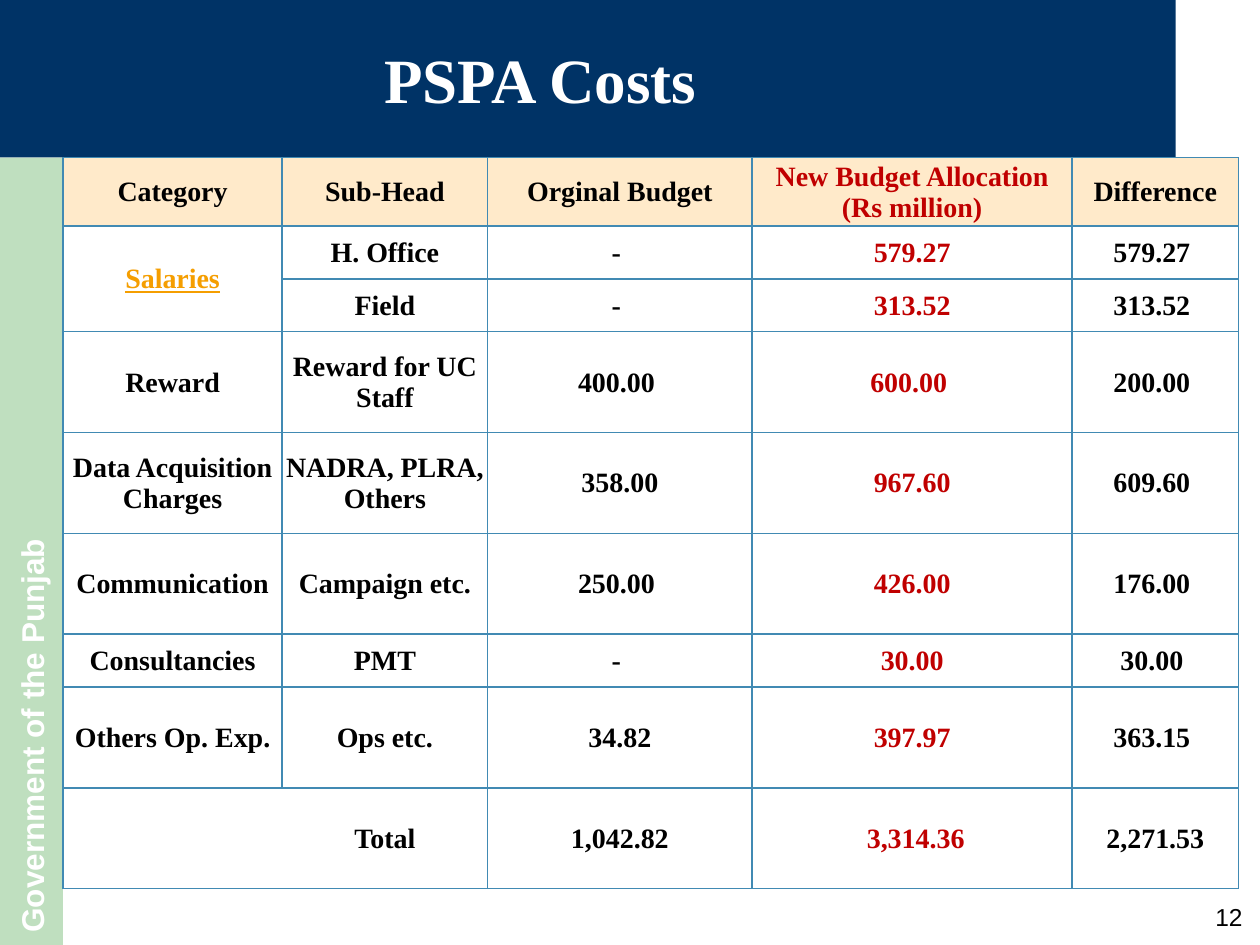
from lxml import etree
from pptx import Presentation
from pptx.dml.color import RGBColor
from pptx.enum.shapes import MSO_SHAPE
from pptx.enum.text import MSO_ANCHOR, PP_ALIGN
from pptx.oxml.ns import qn
from pptx.util import Inches, Pt

COLORS = {
    "navy": "003366", "green": "008000", "white": "FFFFFF", "black": "000000",
    "header": "FFEACA", "border": "418AB3", "red": "C00000", "link": "F59E00",
}
NO_STYLE = "{2D5ABB26-0587-4C30-8999-92F81FD0307C}"
COL_WIDTHS = [1.74, 1.63, 2.1, 2.54, 1.32]
SHORT_ROW, TALL_ROW = 0.42, 0.8
TALL_ROWS = {3, 4, 5, 7, 8}
NEW_BUDGET_COL = 3
ROWS = [
    ["Category", "Sub-Head", "Orginal Budget",
     "New Budget Allocation (Rs million)", "Difference"],
    ["Salaries", "H. Office", "- ", "579.27", "579.27 "],
    ["", "Field", "- ", "313.52", "313.52 "],
    ["Reward", "Reward for UC Staff", "400.00 ", "600.00 ", "200.00 "],
    ["Data Acquisition Charges", "NADRA, PLRA, Others", "358.00", "967.60", "609.60 "],
    ["Communication", "Campaign etc.", "250.00 ", "426.00", "176.00 "],
    ["Consultancies", "PMT", "- ", "30.00", "30.00 "],
    ["Others Op. Exp.", "Ops etc.", "34.82", "397.97", "363.15 "],
    ["", "Total", " 1,042.82 ", " 3,314.36", " 2,271.53 "],
]


def rgb(name):
    return RGBColor.from_string(COLORS[name])


def write(tf, text, color, align=PP_ALIGN.CENTER, **font):
    p = tf.paragraphs[0]
    p.alignment = align
    r = p.add_run()
    r.text = text
    r.font.color.rgb = rgb(color)
    for key, value in font.items():
        setattr(r.font, key, value)


def add_block(s, box, color):
    sp = s.shapes.add_shape(MSO_SHAPE.RECTANGLE, *map(Inches, box))
    sp.shadow.inherit = False
    sp.fill.solid()
    sp.fill.fore_color.rgb = rgb(color)
    sp.line.fill.background()
    sp.text_frame.word_wrap = True
    sp.text_frame.vertical_anchor = MSO_ANCHOR.MIDDLE
    return sp


def add_title_bar(s, left, top, width, height, tail=0.75):
    add_block(s, (left + width, top, tail, height), "navy")
    title = add_block(s, (left, top, width, height), "navy")
    write(title.text_frame, "PSPA Costs", "white",
          name="Times New Roman", size=Pt(36), bold=True)


def add_side_band(s, *box):
    band = add_block(s, box, "green")
    color = band.fill._xPr.find(qn("a:solidFill"))[0]
    etree.SubElement(color, qn("a:alpha"), val="25000")
    band.text_frame._txBody.bodyPr.set("vert", "vert270")
    write(band.text_frame, "Government of the Punjab", "white", PP_ALIGN.LEFT,
          name="Arial", size=Pt(18), bold=True)


def add_borders(cell, sides):
    tcPr = cell._tc.get_or_add_tcPr()
    for i, side in enumerate(sides):
        ln = etree.Element(qn(f"a:ln{side}"), w=str(Pt(1)))
        fill = etree.SubElement(ln, qn("a:solidFill"))
        etree.SubElement(fill, qn("a:srgbClr"), val=COLORS["border"])
        tcPr.insert(i, ln)


def format_cell(cell, row, col, text):
    margins = {"margin_left": 0.01, "margin_right": 0.01,
               "margin_top": 0.01, "margin_bottom": 0}
    for key, value in margins.items():
        setattr(cell, key, Inches(value))
    cell.vertical_anchor = MSO_ANCHOR.MIDDLE
    if row == 0:
        cell.fill.solid()
        cell.fill.fore_color.rgb = rgb("header")
    else:
        cell.fill.background()
    open_sides = {(len(ROWS) - 1, 0): "R", (len(ROWS) - 1, 1): "L"}
    add_borders(cell, [side for side in "LRTB" if side != open_sides.get((row, col))])
    if text:
        is_link = text == "Salaries"
        color = "link" if is_link else "red" if col == NEW_BUDGET_COL else "black"
        write(cell.text_frame, text, color, name="Times New Roman",
              size=Pt(16), bold=True, underline=is_link)


def add_cost_table(s, left, top):
    heights = [TALL_ROW if i in TALL_ROWS else SHORT_ROW for i in range(len(ROWS))]
    box = (left, top, sum(COL_WIDTHS), sum(heights))
    table = s.shapes.add_table(len(ROWS), len(COL_WIDTHS), *map(Inches, box)).table
    table._tbl.tblPr.find(qn("a:tableStyleId")).text = NO_STYLE
    for column, width in zip(table.columns, COL_WIDTHS):
        column.width = Inches(width)
    for row, height in zip(table.rows, heights):
        row.height = Inches(height)
    for i, values in enumerate(ROWS):
        for j, text in enumerate(values):
            format_cell(table.cell(i, j), i, j, text)
    table.cell(1, 0).merge(table.cell(2, 0))


def add_slide_number(s, *box):
    tf = s.shapes.add_textbox(*map(Inches, box)).text_frame
    tf.word_wrap = True
    write(tf, "12", "black", PP_ALIGN.RIGHT, name="Arial", size=Pt(14))


def main():
    prs = Presentation()
    prs.slide_width, prs.slide_height = Inches(10), Inches(7.5)
    s = prs.slides.add_slide(prs.slide_layouts[6])
    add_title_bar(s, 0, 0, 8.58, 1.25)
    add_side_band(s, 0, 1.25, 0.5, 6.25)
    add_slide_number(s, 8.79, 7.11, 1.17, 0.31)
    add_cost_table(s, 0.5, 1.25)
    prs.save("out.pptx")


if __name__ == "__main__":
    main()
